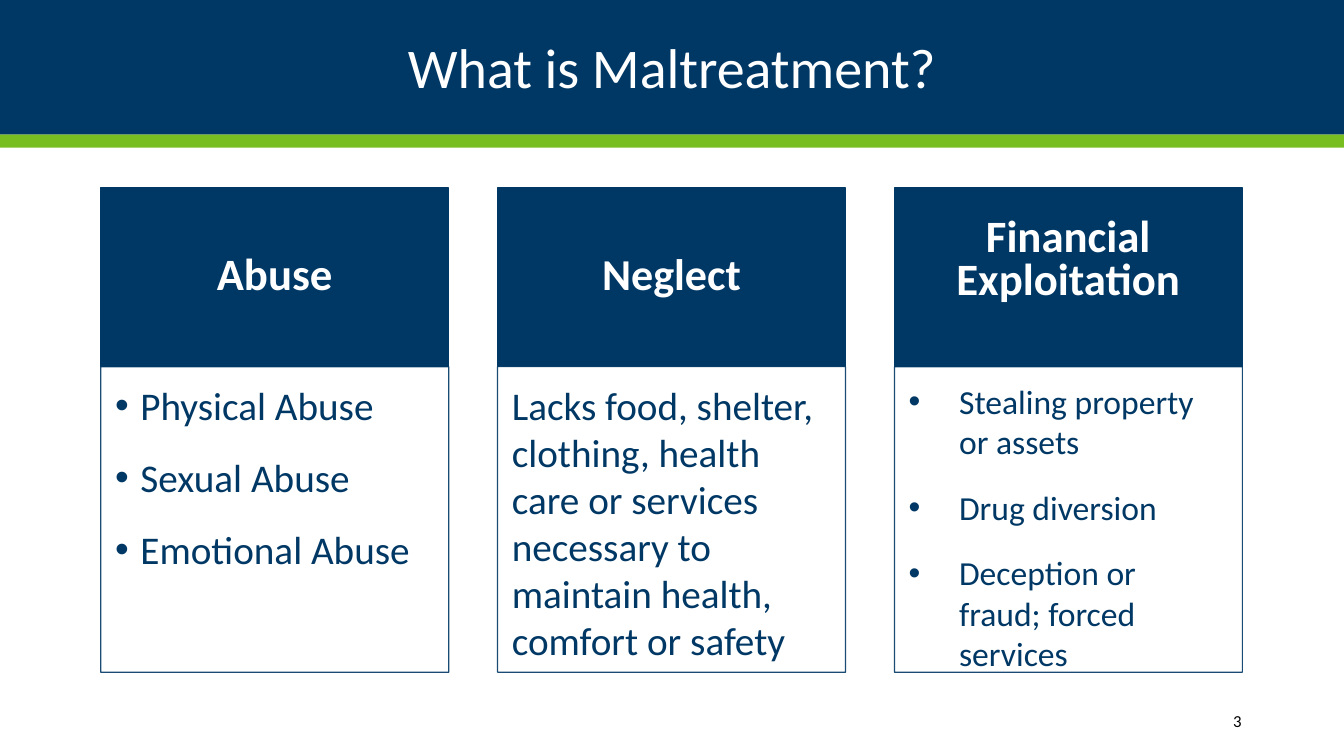
"""Build a slide that explains three kinds of maltreatment in three columns."""
import dataclasses

import lxml.etree
import pptx
import pptx.dml.color
import pptx.enum.shapes
import pptx.enum.text
import pptx.oxml.ns
import pptx.util

Cm = pptx.util.Cm
Pt = pptx.util.Pt
ALIGN = pptx.enum.text.PP_ALIGN
ANCHOR = pptx.enum.text.MSO_ANCHOR
qn = pptx.oxml.ns.qn


@dataclasses.dataclass(frozen=True)
class Theme:
    """Colours and type sizes of the slide."""
    font: str = "Calibri"
    navy: str = "003865"
    green: str = "78BE21"
    white: str = "FFFFFF"
    black: str = "000000"
    title: float = 40
    heading: float = 32
    heading_tight: float = 31.5
    body: float = 28
    body_small: float = 24
    number: float = 12
    outline: float = 0.85
    panel_alpha: int = 90


class SlideBuilder:
    """Draw styled elements on one slide."""

    def __init__(self, s, theme):
        """Keep the slide and its theme."""
        self.s = s
        self.theme = theme

    def rgb(self, colour):
        """Return a colour object for a hex string."""
        return pptx.dml.color.RGBColor.from_string(colour)

    def paint(self, sp, fill, line=None, alpha=None):
        """Fill and outline a shape, with optional opacity in percent."""
        sp.fill.solid()
        sp.fill.fore_color.rgb = self.rgb(fill)
        if line:
            sp.line.color.rgb = self.rgb(line)
            sp.line.width = Pt(self.theme.outline)
        else:
            sp.line.fill.background()
        if alpha:
            for clr in sp.element.spPr.iter(qn("a:srgbClr")):
                lxml.etree.SubElement(clr, qn("a:alpha"), val=str(alpha * 1000))

    def place(self, sp, box):
        """Move and size a shape to a box in centimetres."""
        sp.left, sp.top, sp.width, sp.height = map(Cm, box)

    def rectangle(self, box):
        """Add a rectangle without a shadow."""
        kind = pptx.enum.shapes.MSO_SHAPE.RECTANGLE
        sp = self.s.shapes.add_shape(kind, *map(Cm, box))
        sp.shadow.inherit = False
        return sp

    def frame(self, sp, insets, anchor):
        """Set wrapping, anchor and left, top, right, bottom insets."""
        tf = sp.text_frame
        tf.word_wrap = True
        tf.auto_size = pptx.enum.text.MSO_AUTO_SIZE.NONE
        tf.vertical_anchor = anchor
        tf.margin_left, tf.margin_top, tf.margin_right, tf.margin_bottom = map(Cm, insets)
        return tf

    def add_text(self, p, text, size, colour, align, spacing=1.0, bold=False):
        """Add one formatted run to a paragraph."""
        p.alignment = align
        p.line_spacing = spacing
        r = p.add_run()
        r.text = text
        r.font.name = self.theme.font
        r.font.size = Pt(size)
        r.font.bold = bold
        r.font.color.rgb = self.rgb(colour)

    def band(self, top, height, colour):
        """Add a full-width band behind everything else."""
        sp = self.rectangle((0, top, 33.87, height))
        self.paint(sp, colour)
        sp.element.getparent().insert(2, sp.element)

    def title(self, text, box):
        """Fill the title placeholder."""
        sp = self.s.shapes.title
        self.place(sp, box)
        tf = self.frame(sp, (0.25, 0.13, 0.25, 0.13), ANCHOR.MIDDLE)
        self.add_text(tf.paragraphs[0], text, self.theme.title, self.theme.white,
                      ALIGN.CENTER, 0.9)

    def heading(self, text, box, size, lift):
        """Add a column heading, raised by a larger bottom inset."""
        sp = self.rectangle(box)
        self.paint(sp, self.theme.navy, self.theme.navy)
        tf = self.frame(sp, (0.57, 0.31, 0.57, 0.31 + lift), ANCHOR.MIDDLE)
        self.add_text(tf.paragraphs[0], text, size, self.theme.white, ALIGN.CENTER, 0.8, True)

    def panel(self, sp, items, size, indent):
        """Set a column's paragraphs, bulleted when there is an indent."""
        self.paint(sp, self.theme.white, self.theme.navy, self.theme.panel_alpha)
        tf = self.frame(sp, (0.36, 0.36, 0.48, 0.53), ANCHOR.TOP)
        for i, item in enumerate(items):
            p = tf.add_paragraph() if i else tf.paragraphs[0]
            self.add_text(p, item, size, self.theme.navy, ALIGN.LEFT)
            p.space_before, p.space_after = Pt(6), Pt(12)
            if indent:
                pPr = p._p.get_or_add_pPr()
                pPr.set("marL", str(Cm(indent)))
                pPr.set("indent", str(-Cm(indent)))
                lxml.etree.SubElement(pPr, qn("a:buFont"), typeface="Arial")
                lxml.etree.SubElement(pPr, qn("a:buChar"), char="•")

    def number(self, text, box):
        """Add the slide number."""
        sp = self.s.shapes.add_textbox(*map(Cm, box))
        tf = self.frame(sp, (0.25, 0.13, 0.25, 0.13), ANCHOR.MIDDLE)
        self.add_text(tf.paragraphs[0], text, self.theme.number, self.theme.black, ALIGN.RIGHT)


def main():
    """Create the presentation and save it."""
    theme = Theme()
    prs = pptx.Presentation()
    prs.slide_width, prs.slide_height = Cm(33.87), Cm(19.05)
    s = prs.slides.add_slide(prs.slide_layouts.get_by_name("Two Content"))
    b = SlideBuilder(s, theme)
    b.band(0, 3.39, theme.navy)
    b.band(3.39, 0.33, theme.green)
    b.title("What is Maltreatment?", (2.54, 0.51, 28.79, 2.54))

    columns = [
        ("Abuse", theme.heading, 0, theme.body, 0.64,
         ["Physical Abuse", "Sexual Abuse", "Emotional Abuse"]),
        ("Neglect", theme.heading_tight, 0, theme.body, 0,
         ["Lacks food, shelter, clothing, health care or services "
          "necessary to maintain health, comfort or safety"]),
        ("Financial Exploitation", theme.heading, 0.83, theme.body_small, 1.27,
         ["Stealing property or assets", "Drug diversion",
          "Deception or fraud; forced services"]),
    ]
    lists = iter([s.placeholders[1], s.placeholders[2]])
    left, top, width, pitch = 2.54, 4.74, 8.77, 10
    head_height, panel_height = 4.5, 7.7
    for i, (head, head_size, lift, size, indent, items) in enumerate(columns):
        x = left + i * pitch
        b.heading(head, (x, top, width, head_height), head_size, lift)
        box = (x, top + head_height, width, panel_height)
        if indent:
            sp = next(lists)
            b.place(sp, box)
        else:
            sp = b.rectangle(box)
        b.panel(sp, items, size, indent)

    b.number("3", (27.48, 17.65, 4.06, 1.02))
    prs.save("out.pptx")


if __name__ == "__main__":
    main()
